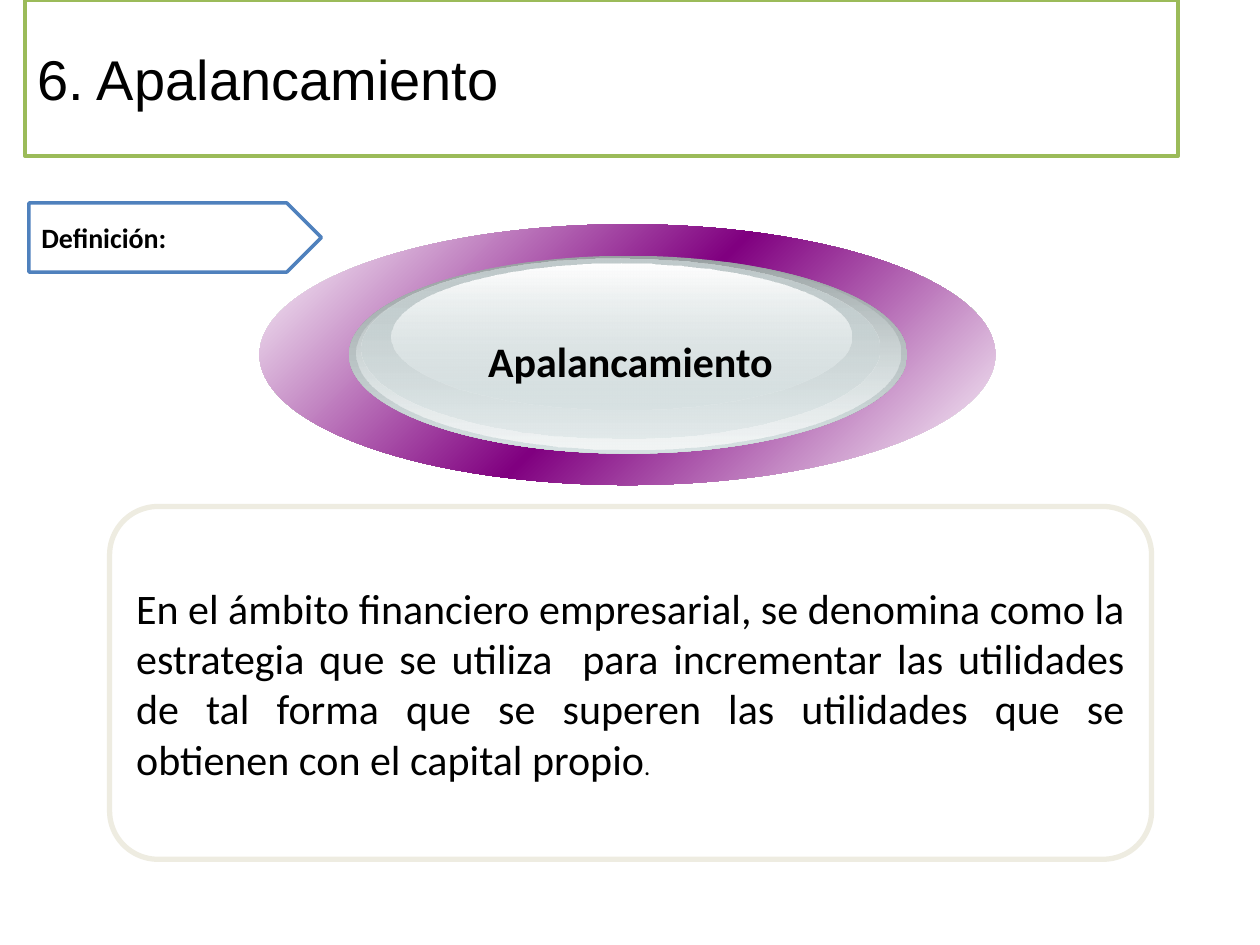
from lxml.etree import SubElement
from pptx import Presentation
from pptx.dml.color import RGBColor
from pptx.enum.shapes import MSO_SHAPE
from pptx.enum.text import MSO_ANCHOR, MSO_AUTO_SIZE, PP_ALIGN
from pptx.oxml.ns import qn
from pptx.util import Inches, Pt

COLORS = {
    "black": "000000", "white": "FFFFFF", "cream": "EEECE1", "blue": "4F81BD",
    "green": "9BBB59", "purple": "800080", "steel": "99A1A2", "silver": "C1CBCC",
    "mist": "D6E1E2", "pearl": "F2F5F5",
}

# Box, gradient angle and stops (position, colour, opacity), from back to front
BUTTON_LAYERS = [
    ((2.06, 1.78, 5.84, 2.07), 45,
     [(0, "white", 100), (50, "purple", 100), (100, "white", 100)]),
    ((2.77, 2.03, 4.43, 1.57), 90, [(0, "steel", 100), (100, "mist", 100)]),
    ((2.83, 2.04, 4.32, 1.53), 90, [(0, "mist", 0), (100, "pearl", 100)]),
    ((2.87, 2.05, 4.11, 1.43), 90, [(0, "silver", 100), (100, "mist", 48)]),
    ((3.11, 2.09, 3.65, 1.16), 90, [(0, "white", 100), (100, "mist", 38)]),
]


def color(name):
    return RGBColor.from_string(COLORS[name])


def place(shape, box):
    shape.left, shape.top, shape.width, shape.height = map(Inches, box)


def style(shape, fill=None, line=None, width=2):
    if fill:
        shape.fill.solid()
        shape.fill.fore_color.rgb = color(fill)
    else:
        shape.fill.background()
    if line:
        shape.line.color.rgb = color(line)
        shape.line.width = Pt(width)
    else:
        shape.line.fill.background()


def add_shape(slide, preset, box, **look):
    shape = slide.shapes.add_shape(preset, *map(Inches, box))
    shape.shadow.inherit = False
    style(shape, **look)
    return shape


def write(shape, *runs, font="Calibri", bold=False, align=PP_ALIGN.LEFT,
          anchor=MSO_ANCHOR.MIDDLE, wrap=True):
    """Fill the shape with one paragraph of (text, size) runs."""
    frame = shape.text_frame
    frame.word_wrap = wrap
    frame.auto_size = MSO_AUTO_SIZE.NONE
    frame.vertical_anchor = anchor
    paragraph = frame.paragraphs[0]
    paragraph.alignment = align
    for text, size in runs:
        run = paragraph.add_run()
        run.text = text
        run.font.name = font
        run.font.size = Pt(size)
        run.font.bold = bold
        run.font.color.rgb = color("black")


def set_gradient(shape, angle, stops):
    """Replace the gradient stops, as opacity needs XML."""
    shape.fill.gradient()
    gradient = shape.fill._xPr.find(qn("a:gradFill"))
    stop_list = gradient.find(qn("a:gsLst"))
    for stop in list(stop_list):
        stop_list.remove(stop)
    for position, name, opacity in stops:
        stop = SubElement(stop_list, qn("a:gs"), pos=str(position * 1000))
        rgb = SubElement(stop, qn("a:srgbClr"), val=COLORS[name])
        if opacity < 100:
            SubElement(rgb, qn("a:alpha"), val=str(opacity * 1000))
    direction = gradient.find(qn("a:lin"))
    direction.set("ang", str(angle * 60000))
    direction.set("scaled", "0")


def add_title(slide):
    title = slide.shapes.title
    place(title, (0.2, 0, 9.15, 1.24))
    style(title, fill="white", line="green")
    write(title, ("6. Apalancamiento", 32), font="Arial")


def add_definition(slide):
    panel = add_shape(slide, MSO_SHAPE.ROUNDED_RECTANGLE,
                      (0.87, 4.02, 8.27, 2.8), line="cream", width=3)
    panel.adjustments[0] = 0.137
    write(panel,
          ("En el ámbito financiero empresarial, se denomina como la estrategia "
           "que se utiliza  para incrementar las utilidades de tal forma que se "
           "superen las utilidades que se obtienen con el capital propio", 24),
          (".", 14), align=PP_ALIGN.JUSTIFY)


def add_button(slide):
    for box, angle, stops in BUTTON_LAYERS:
        set_gradient(add_shape(slide, MSO_SHAPE.OVAL, box), angle, stops)
    label = slide.shapes.add_textbox(*map(Inches, (0.87, 2.61, 8.27, 0.57)))
    write(label, (" Apalancamiento ", 24), bold=True, align=PP_ALIGN.CENTER,
          anchor=MSO_ANCHOR.TOP, wrap=False)


def add_tag(slide):
    tag = add_shape(slide, MSO_SHAPE.PENTAGON, (0.23, 1.61, 2.32, 0.55),
                    fill="white", line="blue")
    write(tag, ("Definición:", 16), bold=True)


def main():
    presentation = Presentation()
    presentation.slide_width, presentation.slide_height = Inches(10), Inches(7.5)
    slide = presentation.slides.add_slide(presentation.slide_layouts[5])
    add_title(slide)
    add_definition(slide)
    add_button(slide)
    add_tag(slide)
    presentation.save("out.pptx")


if __name__ == "__main__":
    main()
